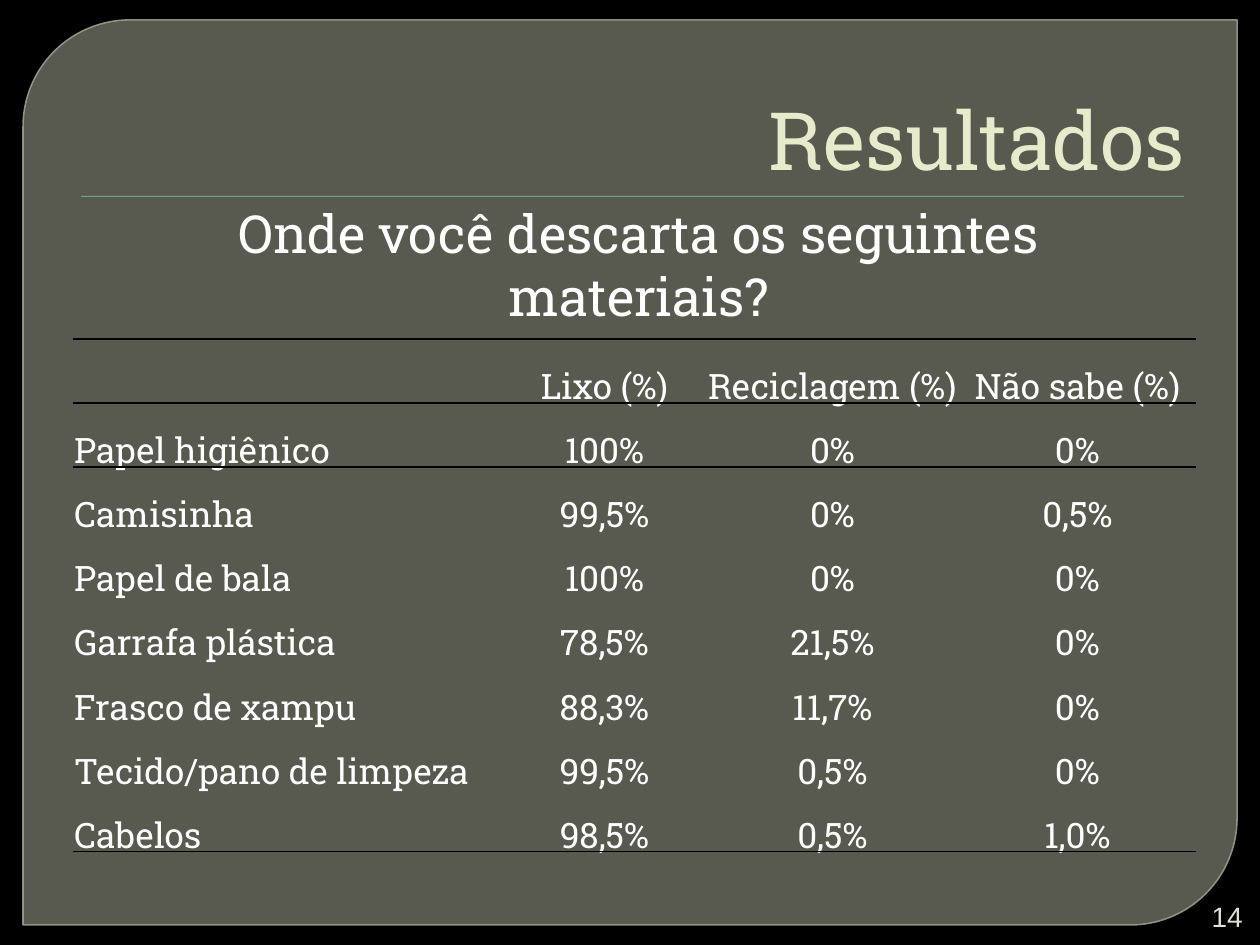
from lxml import etree
from pptx import Presentation
from pptx import util as u
from pptx.dml.color import RGBColor
from pptx.enum import shapes, text
from pptx.oxml import parse_xml
from pptx.oxml.ns import nsdecls, qn

SCALE = 914400 / 126
BLACK = RGBColor(0x00, 0x00, 0x00)
WHITE = RGBColor(0xFF, 0xFF, 0xFF)
OLIVE = RGBColor(0x88, 0x8B, 0x7B)
EDGE = RGBColor(0x9D, 0xA0, 0x90)
GREEN = RGBColor(0x72, 0xA3, 0x76)
CREAM = RGBColor(0xE7, 0xEA, 0xCB)
PALE = RGBColor(0xE0, 0xE0, 0xD4)
SLAB = "Roboto Slab"
NO_GRID = "{2D5ABB26-0587-4C30-8999-92F81FD0307C}"
SHAPE = shapes.MSO_SHAPE
ALIGN = text.PP_ALIGN
ANCHOR = text.MSO_ANCHOR

ROWS = [
    ("", "Lixo (%)", "Reciclagem (%)", "Não sabe (%)"),
    ("Papel higiênico", "100%", "0%", "0%"),
    ("Camisinha", "99,5%", "0%", "0,5%"),
    ("Papel de bala", "100%", "0%", "0%"),
    ("Garrafa plástica", "78,5%", "21,5%", "0%"),
    ("Frasco de xampu", "88,3%", "11,7%", "0%"),
    ("Tecido/pano de limpeza", "99,5%", "0,5%", "0%"),
    ("Cabelos", "98,5%", "0,5%", "1,0%"),
]
WIDTHS = (430, 203, 253, 237)


def px(n):
    return u.Emu(round(n * SCALE))


def fade(fill, pct):
    """Set the opacity of a solid fill in the given parent element."""
    tone = fill.find(qn("a:solidFill"))[0]
    etree.SubElement(tone, qn("a:alpha"), val=str(pct * 1000))


class Deck:
    def __init__(self, wide, high):
        self.prs = Presentation()
        self.prs.slide_width, self.prs.slide_height = px(wide), px(high)
        self.slide = self.prs.slides.add_slide(self.prs.slide_layouts[5])
        self.slide.background.fill.solid()
        self.slide.background.fill.fore_color.rgb = BLACK

    def style(self, para, size, color, align, face=SLAB):
        para.alignment = align
        for run in para.runs:
            run.font.size, run.font.name = u.Pt(size), face
            run.font.color.rgb = color

    def shape(self, kind, box, fill):
        item = self.slide.shapes.add_shape(kind, *map(px, box))
        item.shadow.inherit = False
        item.fill.solid()
        item.fill.fore_color.rgb = fill
        item.line.fill.background()
        return item

    def panel(self, box):
        item = self.shape(SHAPE.ROUND_2_DIAG_RECTANGLE, box, OLIVE)
        item.adjustments[0], item.adjustments[1] = 0.118, 0
        item.line.color.rgb, item.line.width = EDGE, u.Pt(0.87)
        props = item._element.spPr
        fade(props, 65)
        fade(props.find(qn("a:ln")), 88)

    def title(self, words, box):
        item = self.slide.shapes.title
        item.left, item.top, item.width, item.height = map(px, box)
        # Bring the title in front of the panel
        self.slide.shapes._spTree.append(item._element)
        frame = item.text_frame
        frame.text = words
        frame.auto_size = text.MSO_AUTO_SIZE.NONE
        frame.vertical_anchor = ANCHOR.BOTTOM
        self.style(frame.paragraphs[0], 46, CREAM, ALIGN.RIGHT)

    def label(self, words, box, size, color, align, face=SLAB, anchor=ANCHOR.TOP):
        frame = self.slide.shapes.add_textbox(*map(px, box)).text_frame
        frame.word_wrap = True
        frame.vertical_anchor = anchor
        frame.text = words
        self.style(frame.paragraphs[0], size, color, align, face)

    def rule(self, cell, side):
        """Draw a black border on one side (T or B) of a cell."""
        cell._tc.get_or_add_tcPr().append(parse_xml(
            f'<a:ln{side} {nsdecls("a")} w="12700"><a:solidFill>'
            f'<a:srgbClr val="{BLACK}"/></a:solidFill></a:ln{side}>'))

    def cell(self, cell, words, align, sides):
        cell.margin_left = cell.margin_right = cell.margin_top = px(1)
        cell.margin_bottom = 0
        cell.vertical_anchor = ANCHOR.BOTTOM
        for side in sides:
            self.rule(cell, side)
        cell.fill.background()
        cell.text = words
        para = cell.text_frame.paragraphs[0]
        para.line_spacing = 1.5
        self.style(para, 20, WHITE, align)

    def table(self, rows, widths, left, top, step):
        last = len(rows) - 1
        box = (left, top, sum(widths), step * len(rows))
        grid = self.slide.shapes.add_table(
            len(rows), len(widths), *map(px, box)).table
        grid._tbl.tblPr.find(qn("a:tableStyleId")).text = NO_GRID
        grid.first_row = grid.horz_banding = False
        for col, wide in zip(grid.columns, widths):
            col.width = px(wide)
        borders = {0: "TB", 1: "T", last: "B"}
        for r, row in enumerate(rows):
            grid.rows[r].height = px(step)
            for c, words in enumerate(row):
                align = ALIGN.CENTER if c else ALIGN.JUSTIFY
                self.cell(grid.cell(r, c), words, align, borders.get(r, ""))


def main():
    deck = Deck(1260, 945)

    # Frame and heading
    deck.panel((23, 20, 1214, 905))
    deck.shape(SHAPE.RECTANGLE, (81, 196, 1103, 1), GREEN)
    deck.title("Resultados", (63, 35, 1134, 158))

    # Page number
    deck.label("14", (1191, 897, 64, 38), 16, PALE, ALIGN.RIGHT,
               "Arial", ANCHOR.MIDDLE)

    # Question and answers
    deck.label("Onde você descarta os seguintes materiais?",
               (98, 195, 1082, 77), 30, WHITE, ALIGN.CENTER)
    deck.table(ROWS, WIDTHS, 73, 339, 62)

    deck.prs.save("out.pptx")


if __name__ == "__main__":
    main()
